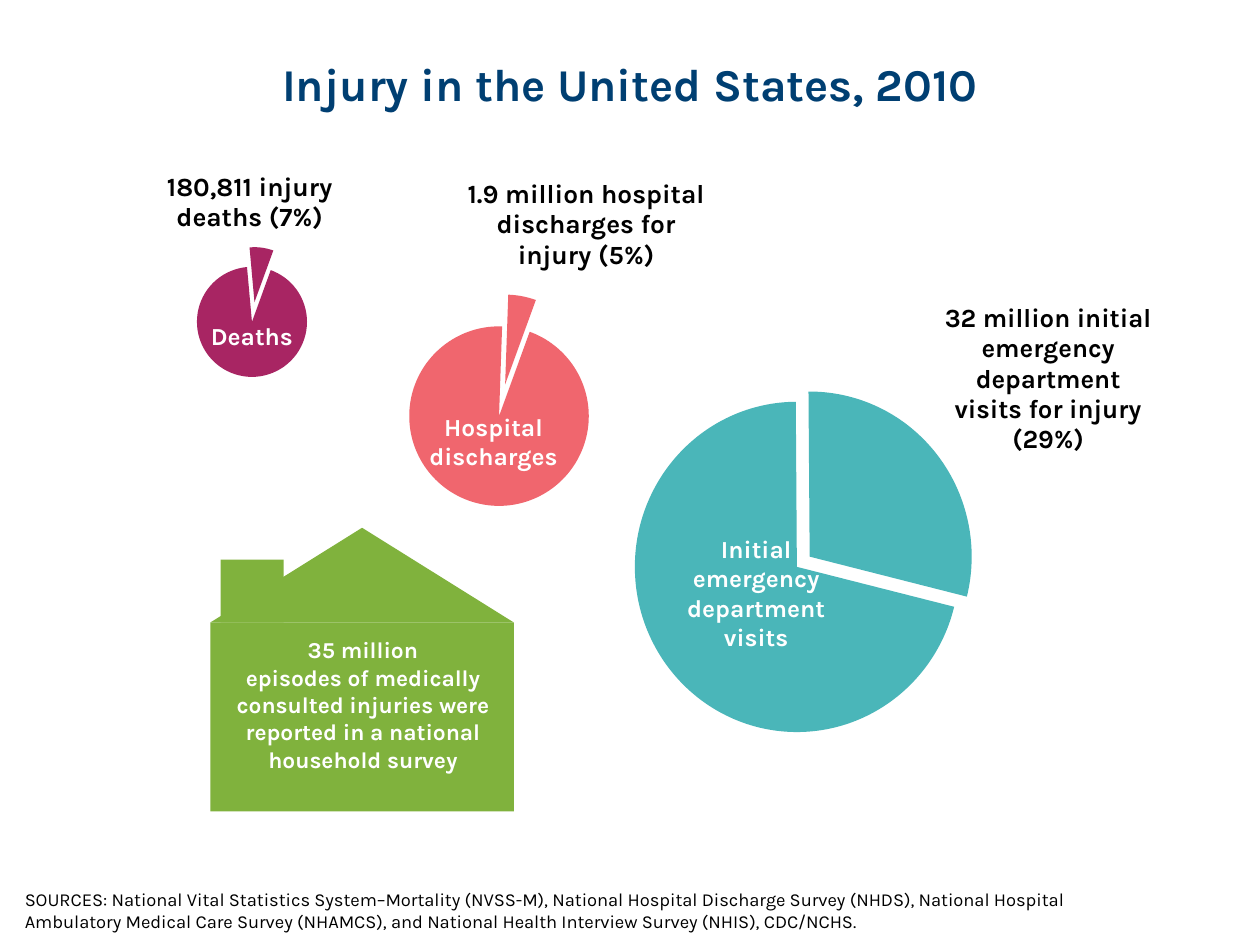
import pptx
import pptx.chart.data
import pptx.dml.color
import pptx.enum.chart
import pptx.enum.shapes
import pptx.enum.text
import pptx.util
from lxml import etree
from pptx.util import Cm, Pt

RGBColor = pptx.dml.color.RGBColor
SHAPE = pptx.enum.shapes.MSO_SHAPE
ALIGN = pptx.enum.text.PP_ALIGN
ANCHOR = pptx.enum.text.MSO_ANCHOR

NAVY = RGBColor(0x00, 0x3F, 0x72)
BLACK = RGBColor(0x00, 0x00, 0x00)
WHITE = RGBColor(0xFF, 0xFF, 0xFF)
PLUM = RGBColor(0xA8, 0x25, 0x63)
CORAL = RGBColor(0xF0, 0x66, 0x6E)
TEAL = RGBColor(0x4A, 0xB6, 0xB9)
GREEN = RGBColor(0x80, 0xB2, 0x3D)
FONT = "Karla"
C = "http://schemas.openxmlformats.org/drawingml/2006/chart"


def add_text(box, text, size, color, bold=True, align=ALIGN.CENTER, anchor=ANCHOR.TOP):
    """Add a text box at box (left, top, width, height in cm), one paragraph a line."""
    tf = slide.shapes.add_textbox(*[Cm(v) for v in box]).text_frame
    tf.word_wrap = True
    tf.vertical_anchor = anchor
    tf.text = text
    for p in tf.paragraphs:
        p.alignment = align
        style_font(p.font, size, color, bold)


def style_font(font, size, color, bold):
    font.name = FONT
    font.size = Pt(size)
    font.bold = bold
    font.color.rgb = color


prs = pptx.Presentation()
prs.slide_width = Cm(25.4)
prs.slide_height = Cm(19.05)
slide = prs.slides.add_slide(prs.slide_layouts[6])

add_text((0.64, 0.84, 24.13, 1.7), "Injury in the United States, 2010", 26, NAVY,
         anchor=ANCHOR.MIDDLE)

# Frame, plot box and title corner in cm on the slide; injury share and explosion in percent
pies = [
    ("180,811 injury\ndeaths (7%)", (1.57, 2.92, 6.99, 5.44), (3.97, 5.38, 2.22, 2.22),
     (3.29, 3.35), 7, 36, 20, PLUM),
    ("1.9 million hospital\ndischarges for\ninjury (5%)", (4.88, 3.18, 10.36, 8.05),
     (8.25, 6.58, 3.62, 3.62), (9.35, 3.5), 5, 36, 20, CORAL),
    ("32 million initial\nemergency\ndepartment\nvisits for injury\n(29%)",
     (12.7, 5.89, 10.59, 9.53), (12.8, 8.1, 6.66, 6.66), (19.09, 6.0), 29, 10, 104, TEAL),
]
for title, frame, plot, corner, share, explosion, start, color in pies:
    data = pptx.chart.data.CategoryChartData()
    data.categories = ["1", "2"]
    data.add_series("Series 1", (100 - share, share))
    chart = slide.shapes.add_chart(pptx.enum.chart.XL_CHART_TYPE.PIE,
                                   *[Cm(v) for v in frame], data).chart
    chart.has_legend = False
    chart.font.name = "Calibri"
    chart.font.size = Pt(18)
    chart.font.color.rgb = BLACK
    pie = chart.plots[0]
    pie.vary_by_categories = False
    series = pie.series[0]
    for i in range(2):
        fmt = series.points[i].format
        fmt.fill.solid()
        fmt.fill.fore_color.rgb = color
        fmt.line.fill.background()

    chart.has_title = True
    tf = chart.chart_title.text_frame
    tf.text = title
    for p in tf.paragraphs:
        p.alignment = ALIGN.CENTER
        style_font(p.font, 15, BLACK, True)
    chart.chart_title.include_in_layout = False

    # Explosion, start angle and manual layouts have no public methods
    root = chart.element
    injury_point = root.findall(f".//{{{C}}}dPt")[1]
    burst = etree.Element(f"{{{C}}}explosion", val=str(explosion))
    injury_point.find(f"{{{C}}}spPr").addprevious(burst)
    pie_chart = root.find(f".//{{{C}}}pieChart")
    for old in pie_chart.findall(f"{{{C}}}firstSliceAng"):
        pie_chart.remove(old)
    etree.SubElement(pie_chart, f"{{{C}}}firstSliceAng", val=str(start))

    left, top, width, height = frame
    for parent, box in (("title", corner), ("plotArea", plot)):
        owner = root.find(f".//{{{C}}}{parent}")
        for old in owner.findall(f"{{{C}}}layout"):
            owner.remove(old)
        layout = etree.Element(f"{{{C}}}layout")
        manual = etree.SubElement(layout, f"{{{C}}}manualLayout")
        settings = [("xMode", "edge"), ("yMode", "edge"),
                    ("x", (box[0] - left) / width), ("y", (box[1] - top) / height)]
        if parent == "plotArea":
            settings.insert(0, ("layoutTarget", "inner"))
            settings += [("w", box[2] / width), ("h", box[3] / height)]
        for tag, value in settings:
            etree.SubElement(manual, f"{{{C}}}{tag}", val=str(value))
        owner.insert(1 if parent == "title" else 0, layout)

add_text((3.81, 6.35, 2.54, 0.86), "Deaths", 14, WHITE)
add_text((8.26, 8.18, 3.38, 1.45), "Hospital discharges", 14, WHITE)
add_text((13.34, 10.64, 3.81, 2.64), "Initial\nemergency department\nvisits", 14, WHITE)

house = [
    (SHAPE.RECTANGLE, (4.24, 12.55, 6.12, 3.81)),
    (SHAPE.ISOSCELES_TRIANGLE, (4.24, 10.64, 6.12, 1.91)),
    (SHAPE.RECTANGLE, (4.45, 11.28, 1.27, 1.27)),
]
for kind, box in house:
    sp = slide.shapes.add_shape(kind, *[Cm(v) for v in box])
    sp.shadow.inherit = False
    sp.fill.solid()
    sp.fill.fore_color.rgb = GREEN
    sp.line.fill.background()
add_text((4.24, 12.7, 6.15, 3.02),
         "35 million\nepisodes of medically consulted injuries were reported "
         "in a national household survey", 13, WHITE)

add_text((0.25, 17.78, 21.97, 1.14),
         "SOURCES: National Vital Statistics System–Mortality (NVSS-M), National Hospital "
         "Discharge Survey (NHDS), National Hospital Ambulatory Medical Care Survey (NHAMCS), "
         "and National Health Interview Survey (NHIS), CDC/NCHS.",
         10.5, BLACK, bold=False, align=ALIGN.LEFT)

prs.save("out.pptx")
